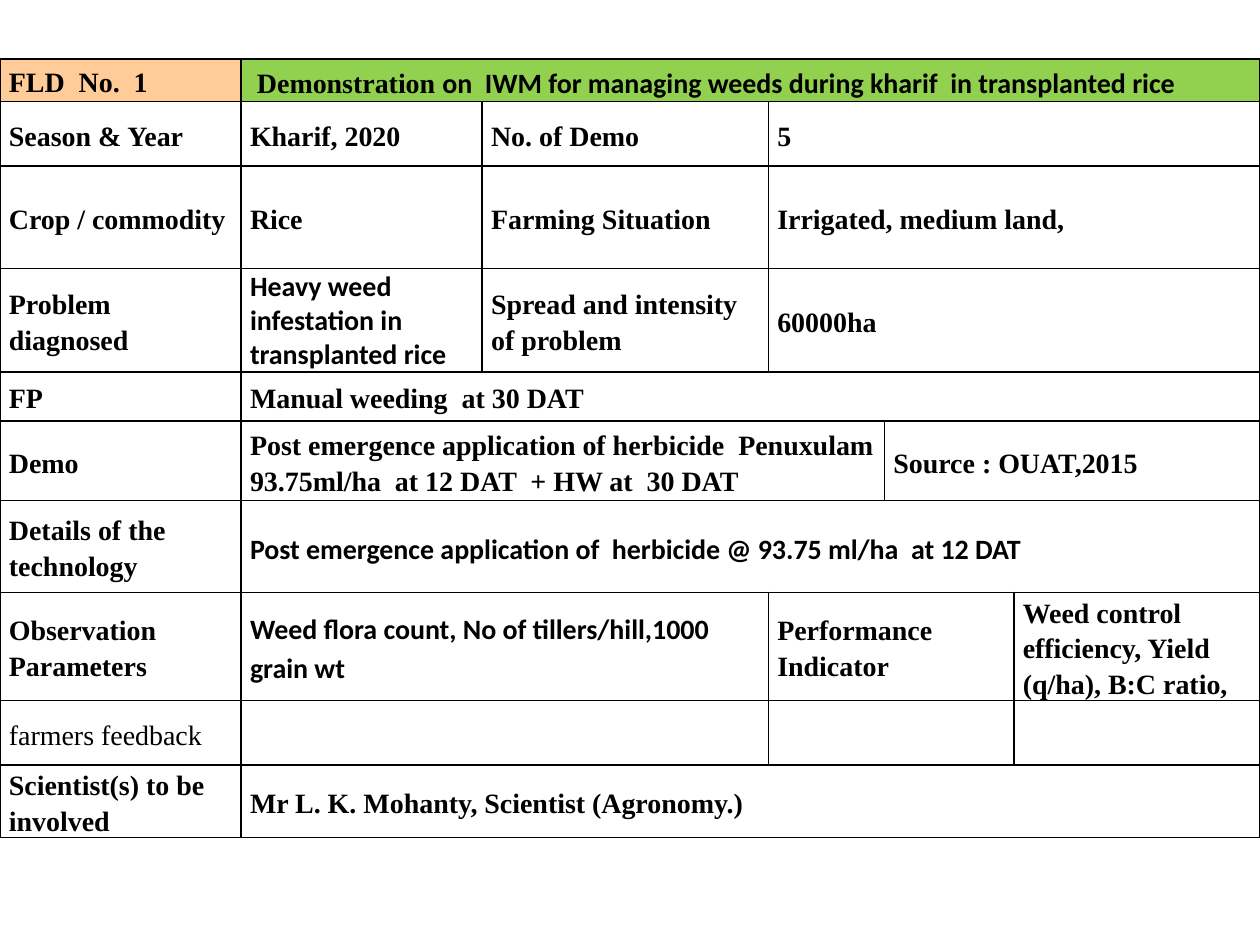
from pptx import Presentation
from pptx import util as u
from pptx.dml.color import RGBColor
from pptx.enum import text
from pptx.oxml import parse_xml
from pptx.oxml.ns import nsdecls

SERIF = "Times New Roman"
SANS = "Calibri"


def color(value):
    return RGBColor.from_string(value)


class Sheet:
    size = u.Pt(16)
    ink = "000000"
    border = u.Pt(1)
    spacing = 1.15

    def __init__(self, prs):
        self.slide = prs.slides.add_slide(prs.slide_layouts[6])

    def table(self, top, height, widths, heights):
        frame = self.slide.shapes.add_table(
            len(heights), len(widths), 0, u.Cm(top), u.Cm(sum(widths)), u.Cm(height))
        table = frame.table
        table.first_row = table.horz_banding = False
        for column, width in zip(table.columns, widths):
            column.width = u.Cm(width)
        for row, row_height in zip(table.rows, heights):
            row.height = u.Cm(row_height)
        frame.height = u.Cm(height)
        for cell in table.iter_cells():
            self.outline(cell)
            cell.fill.background()
        return table

    def outline(self, cell):
        tc_pr = cell._tc.get_or_add_tcPr()
        for side in "LRTB":
            tc_pr.append(parse_xml(
                f'<a:ln{side} {nsdecls("a")} w="{self.border}"><a:solidFill>'
                f'<a:srgbClr val="{self.ink}"/></a:solidFill></a:ln{side}>'))

    def label(self, cell, runs, bold=True, spacing=spacing):
        cell.vertical_anchor = text.MSO_ANCHOR.MIDDLE
        cell.margin_left = cell.margin_right = u.Cm(0.18)
        cell.margin_top, cell.margin_bottom = u.Cm(0.02), 0
        p = cell.text_frame.paragraphs[0]
        p.line_spacing = spacing
        p.font.size, p.font.bold = self.size, bold
        p.font.color.rgb = color(self.ink)
        for words, font in runs:
            r = p.add_run()
            r.text = words
            r.font.name = font

    def paint(self, cell, fill):
        cell.fill.solid()
        cell.fill.fore_color.rgb = color(fill)


def serif(words):
    return [(words, SERIF)]


def sans(words):
    return [(words, SANS)]


WIDTHS = [4.86, 4.86, 5.77, 2.34, 2.61, 4.96]
HEIGHTS = [0.86, 1.3, 2.06, 1.91, 0.99, 1.6, 1.85, 2.01, 1.3, 1.3]

ROWS = [
    [(1, serif("FLD  No.  1")),
     (5, serif(" Demonstration ")
      + sans("on  IWM for managing weeds during kharif  in transplanted rice"))],
    [(1, serif("Season & Year")), (1, serif("Kharif, 2020")),
     (1, serif("No. of Demo")), (3, serif("5"))],
    [(1, serif("Crop / commodity")), (1, serif("Rice")),
     (1, serif("Farming Situation")), (3, serif("Irrigated, medium land,"))],
    [(1, serif("Problem  diagnosed")),
     (1, sans("Heavy weed infestation in transplanted rice"), {"spacing": 1.0}),
     (1, serif("Spread and intensity of problem")), (3, serif("60000ha"))],
    [(1, serif("FP")), (5, serif("Manual weeding  at 30 DAT"))],
    [(1, serif("Demo")),
     (3, serif("Post emergence application of herbicide  Penuxulam "
               "93.75ml/ha  at 12 DAT  + HW at  30 DAT")),
     (2, serif("Source : OUAT,2015"))],
    [(1, serif("Details of the technology")),
     (5, sans("Post emergence application of  herbicide @ 93.75 ml/ha  at 12 DAT"))],
    [(1, serif("Observation Parameters")),
     (2, sans("Weed flora count, No of tillers/hill,1000 grain wt")),
     (2, serif("Performance Indicator")),
     (1, serif("Weed control efficiency, Yield (q/ha), B:C ratio,"))],
    [(1, serif("farmers feedback"), {"bold": False}), (2, []), (2, []), (1, [])],
    [(1, serif("Scientist(s) to be involved")),
     (5, serif("Mr L. K. Mohanty, Scientist (Agronomy.)"))],
]


def main():
    prs = Presentation()
    prs.slide_width, prs.slide_height = u.Cm(25.4), u.Cm(19.05)
    s = Sheet(prs)
    table = s.table(1.19, 16.71, WIDTHS, HEIGHTS)
    for i, entries in enumerate(ROWS):
        j = 0
        for span, runs, *style in entries:
            cell = table.cell(i, j)
            if span > 1:
                cell.merge(table.cell(i, j + span - 1))
            if runs:
                s.label(cell, runs, **(style[0] if style else {}))
            j += span
    s.paint(table.cell(0, 0), "FFCC99")
    s.paint(table.cell(0, 1), "92D050")
    prs.save("out.pptx")


if __name__ == "__main__":
    main()
